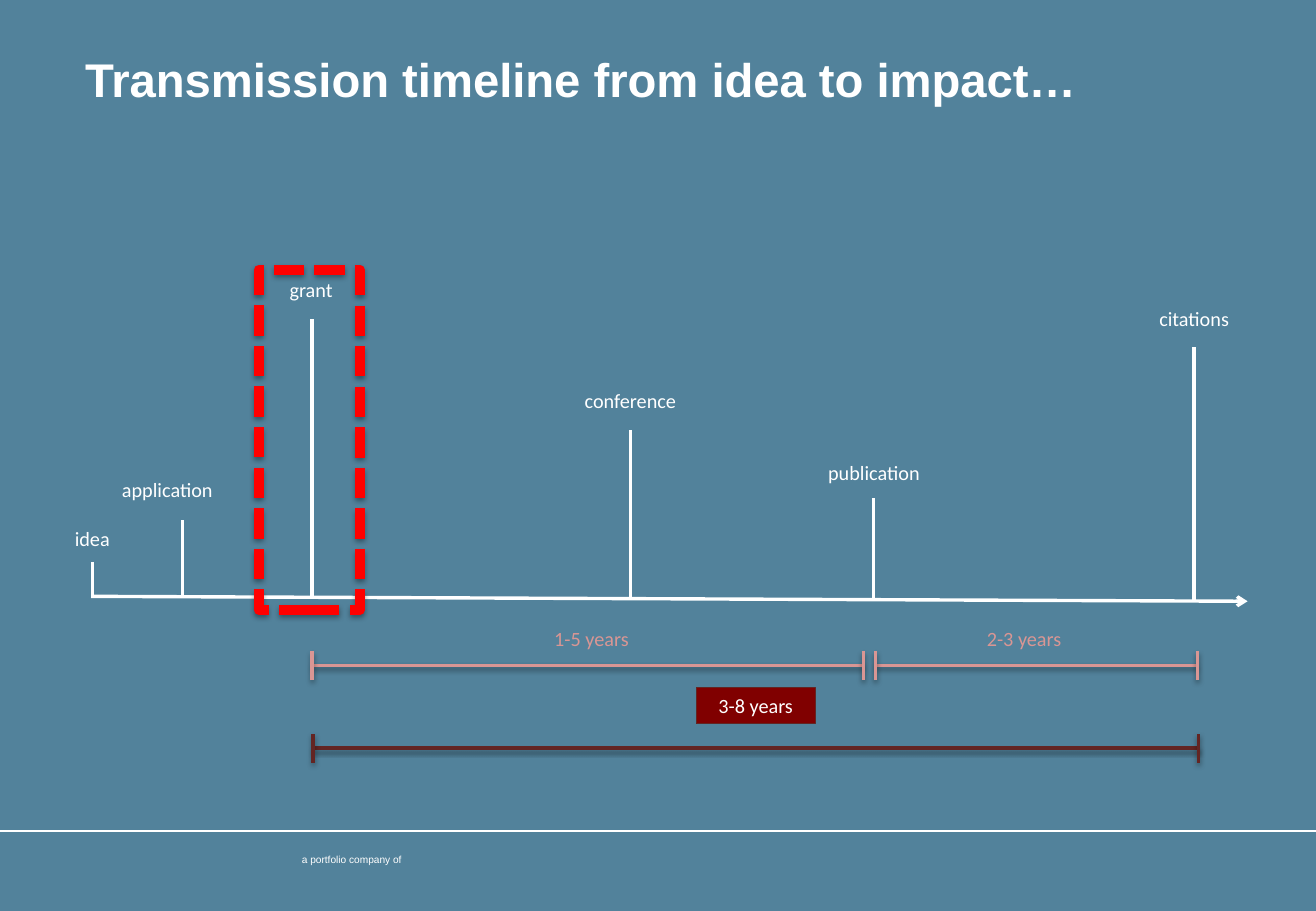
from lxml.etree import SubElement
from pptx import Presentation
from pptx.dml.color import RGBColor
from pptx.enum.dml import MSO_LINE
from pptx.enum.shapes import MSO_CONNECTOR, MSO_SHAPE
from pptx.enum.text import MSO_ANCHOR, PP_ALIGN
from pptx.oxml.ns import qn
from pptx.util import Pt

WHITE = RGBColor(0xFF, 0xFF, 0xFF)
BLUE = RGBColor(0x52, 0x82, 0x9B)
PINK = RGBColor(0xD9, 0x96, 0x94)
MAROON = RGBColor(0x80, 0x00, 0x00)
BROWN = RGBColor(0x63, 0x25, 0x23)
RED = RGBColor(0xFF, 0x00, 0x00)

# Content, lengths in points
TITLE = "Transmission timeline from idea to impact…"
FOOTER = "a portfolio company of"
WIDE, HIGH = 780, 540
AXIS = (54, 353.5, 739.5, 356.4)
# name, x of line, top of line, centre and top of label
EVENTS = [
    ("idea", 54.7, 333.4, 54.7, 308.2),
    ("application", 108, 308.2, 99.2, 279.4),
    ("grant", 185, 189.4, 184.4, 160.6),
    ("conference", 373.7, 254.9, 373.7, 226.8),
    ("publication", 517.7, 295.2, 518, 269.3),
    ("citations", 707.8, 205.9, 707.8, 177.8),
]
# name, start, end, y, centre and top of label, line colour, text colour, fill
SPANS = [
    ("1-5 years", 185, 511.9, 394.6, 350.6, 367.9, PINK, PINK, None),
    ("2-3 years", 518.9, 709.9, 394.6, 607, 367.9, PINK, PINK, None),
    ("3-8 years", 185.6, 710.5, 443.5, 447.9, 407.5, BROWN, WHITE, MAROON),
]
CAP = 8.6
LABEL_W, LABEL_H = 100, 21.6
BADGE_W = 70.6

deck = Presentation()
deck.slide_width, deck.slide_height = Pt(WIDE), Pt(HIGH)
slide = deck.slides.add_slide(deck.slide_layouts[5])
slide.background.fill.solid()
slide.background.fill.fore_color.rgb = BLUE
shapes = slide.shapes


def set_shadow(shape, alpha):
    """Soft shadow straight down, or none when alpha is 0."""
    props = shape._element.spPr
    for old in props.findall(qn("a:effectLst")):
        props.remove(old)
    effects = SubElement(props, qn("a:effectLst"))
    if alpha:
        outer = SubElement(effects, qn("a:outerShdw"), blurRad=str(Pt(3.1)),
                           dist=str(Pt(1.7)), dir="5400000", rotWithShape="0")
        ink = SubElement(outer, qn("a:srgbClr"), val="000000")
        SubElement(ink, qn("a:alpha"), val=str(alpha * 1000))


def add_line(x1, y1, x2, y2, color=WHITE, width=2, alpha=0):
    line = shapes.add_connector(MSO_CONNECTOR.STRAIGHT,
                                Pt(x1), Pt(y1), Pt(x2), Pt(y2))
    line.line.color.rgb = color
    line.line.width = Pt(width)
    set_shadow(line, alpha)
    return line


def style(shape, text, size, color, font):
    frame = shape.text_frame
    frame.word_wrap = True
    frame.text = text
    para = frame.paragraphs[0]
    para.alignment = PP_ALIGN.CENTER
    face = para.runs[0].font
    face.size, face.name, face.color.rgb = Pt(size), font, color


def add_label(text, mid, top, color=WHITE, fill=None):
    width = BADGE_W if fill else LABEL_W
    place = Pt(mid - width / 2), Pt(top), Pt(width), Pt(LABEL_H)
    if fill:
        label = shapes.add_shape(MSO_SHAPE.RECTANGLE, *place)
        label.shadow.inherit = False
        label.fill.solid()
        label.fill.fore_color.rgb = fill
        label.line.color.rgb = BROWN
        label.line.width = Pt(0.75)
    else:
        label = shapes.add_textbox(*place)
    style(label, text, 12, color, "Calibri")


# Title
title = shapes.title
title.left, title.top, title.width, title.height = Pt(43.2), Pt(25.9), Pt(702), Pt(121)
style(title, TITLE, 28, WHITE, "Arial")
title.text_frame.vertical_anchor = MSO_ANCHOR.TOP
title.text_frame.paragraphs[0].alignment = PP_ALIGN.LEFT
title.text_frame.paragraphs[0].runs[0].font.bold = True

# Footer
add_line(0, 492.5, WIDE, 492.5, width=1.5)
footer = shapes.add_textbox(Pt(172.8), Pt(492.5), Pt(71.3), Pt(16.6))
style(footer, FOOTER, 6, WHITE, "Arial")
frame = footer.text_frame
frame.margin_left = frame.margin_right = frame.margin_top = frame.margin_bottom = 0
frame.vertical_anchor = MSO_ANCHOR.MIDDLE
frame.paragraphs[0].line_spacing = Pt(25)

# Time axis with arrowhead
axis = add_line(*AXIS)
SubElement(axis.line._get_or_add_ln(), qn("a:tailEnd"), type="arrow")

# Events stand on the slightly sloping axis
left, start_y, right, end_y = AXIS
for name, x, top, mid, label_top in EVENTS:
    base = start_y + (end_y - start_y) * (x - left) / (right - left)
    add_line(x, base, x, top)
    add_label(name, mid, label_top)

# Spans with end caps
for name, start, end, y, mid, label_top, color, ink, fill in SPANS:
    add_line(start, y, end, y, color, alpha=38)
    for x in (start, end):
        add_line(x, y + CAP, x, y - CAP, color, alpha=38)
    add_label(name, mid, label_top, ink, fill)

# Dashed frame around the grant
focus = shapes.add_shape(MSO_SHAPE.RECTANGLE, Pt(153.4), Pt(159.9), Pt(59.8), Pt(201.6))
focus.fill.background()
focus.line.color.rgb = RED
focus.line.width = Pt(6)
focus.line.dash_style = MSO_LINE.SQUARE_DOT
set_shadow(focus, 35)

deck.save("out.pptx")
